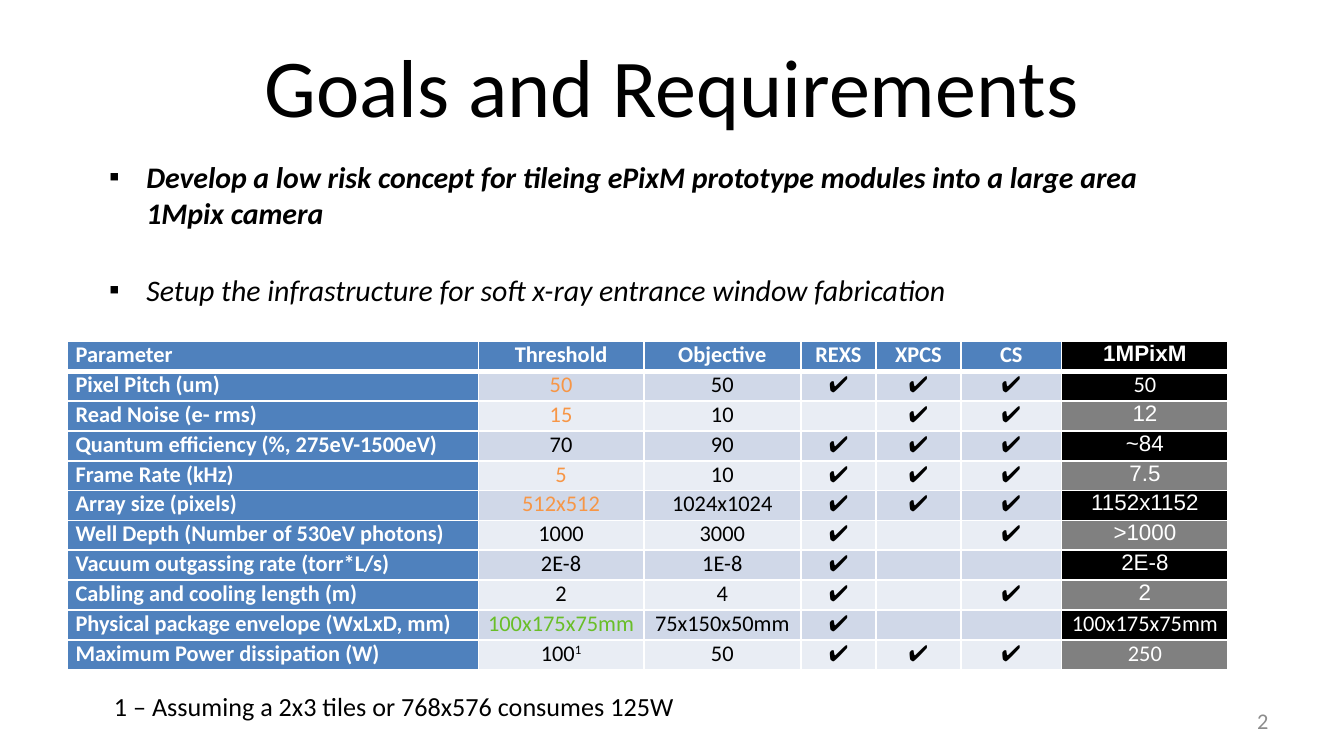
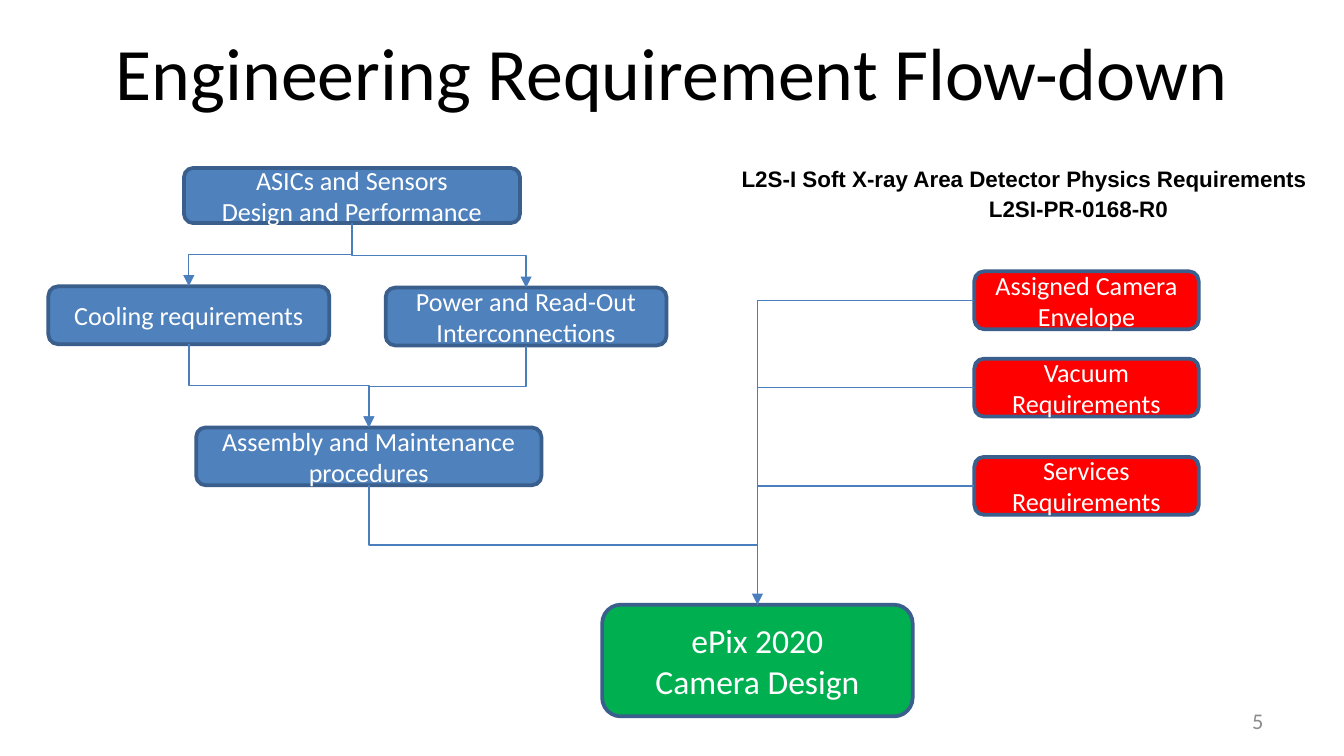
from dataclasses import dataclass

from lxml import etree
from pptx import Presentation
from pptx import util as u
from pptx.dml.color import RGBColor
from pptx.enum import shapes, text
from pptx.oxml import ns

COLORS = {
    "ink": "000000", "white": "FFFFFF", "page": "8C8C8C", "blue": "4F81BD",
    "edge": "3A5F8C", "link": "4B7EBC", "red": "FF0000", "green": "00B050",
    "odd": "D0D8E8", "even": "E9EDF4", "gray": "808080",
    "orange": "F79646", "lime": "69BE28",
}
ALIGN = text.PP_ALIGN
ANCHOR = text.MSO_ANCHOR
BOTTOM_SIDE, LEFT_SIDE, TOP_SIDE = 2, 1, 0


@dataclass(frozen=True)
class Requirement:
    parameter: str
    threshold: str
    objective: str
    experiments: str
    result: str
    tint: str = "ink"
    result_font: str = "Arial"
    note: str = ""


@dataclass(frozen=True)
class Block:
    label: str
    left: float
    top: float
    width: float
    height: float = 31
    fill: str = "blue"
    size: float = 14

    @property
    def center(self) -> float:
        return self.left + self.width / 2

    @property
    def middle(self) -> float:
        return self.top + self.height / 2

    @property
    def bottom(self) -> float:
        return self.top + self.height


HEADINGS = ["Parameter", "Threshold", "Objective", "REXS", "XPCS", "CS", "1MPixM"]
COLUMN_WIDTHS = [220.3, 88.6, 84.2, 40.3, 45.4, 54, 89.3]
ROW_HEIGHT = 16
REQUIREMENTS = [
    Requirement("Pixel Pitch (um)", "50", "50", "✔✔✔", "50", "orange", "Calibri"),
    Requirement("Read Noise (e- rms)", "15", "10", "-✔✔", "12", "orange"),
    Requirement("Quantum efficiency (%, 275eV-1500eV)", "70", "90", "✔✔✔", "~84"),
    Requirement("Frame Rate (kHz)", "5", "10", "✔✔✔", "7.5", "orange"),
    Requirement("Array size (pixels)", "512x512", "1024x1024", "✔✔✔", "1152x1152", "orange"),
    Requirement("Well Depth (Number of 530eV photons)", "1000", "3000", "✔-✔", ">1000"),
    Requirement("Vacuum outgassing rate (torr*L/s)", "2E-8", "1E-8", "✔--", "2E-8"),
    Requirement("Cabling and cooling length (m)", "2", "4", "✔-✔", "2"),
    Requirement("Physical package envelope (WxLxD, mm)", "100x175x75mm", "75x150x50mm",
                "✔--", "100x175x75mm", "lime", "Calibri"),
    Requirement("Maximum Power dissipation (W)", "100", "50", "✔✔✔", "250",
                result_font="Calibri", note="1"),
]

SENSORS = Block("ASICs and Sensors\nDesign and Performance", 98.6, 90, 180, 29.5)
COOLING = Block("Cooling requirements", 25.9, 153.4, 150.5)
POWER = Block("Power and Read-Out Interconnections", 206.6, 154.1, 150.5)
ASSEMBLY = Block("Assembly and Maintenance procedures", 105.1, 229, 185)
CAMERA = Block("ePix 2020\nCamera Design", 322.6, 324, 166.3, 59.8, "green", 18)
EXTERNAL = [
    Block(label, 522, top, 120.2, fill="red")
    for label, top in [("Assigned Camera Envelope", 145.4),
                       ("Vacuum Requirements", 192.2),
                       ("Services\nRequirements", 244.8)]
]
FLOWS = [(SENSORS, COOLING), (SENSORS, POWER), (COOLING, ASSEMBLY),
         (POWER, ASSEMBLY), (ASSEMBLY, CAMERA)]


def rgb(name: str) -> RGBColor:
    return RGBColor.from_string(COLORS[name])


def write(frame, content: str, *, size: float = 12, color: str = "ink",
          font: str = "Calibri", bold: bool = False, italic: bool = False,
          align=ALIGN.LEFT, anchor=None, superscript: str = "") -> None:
    if anchor is not None:
        frame.vertical_anchor = anchor
    for index, line in enumerate(content.split("\n")):
        paragraph = frame.paragraphs[0] if index == 0 else frame.add_paragraph()
        paragraph.alignment = align
        if not line:
            etree.SubElement(paragraph._p, ns.qn("a:endParaRPr"), sz=str(int(size * 100)))
        for part, raised in ((line, False), (superscript, True)):
            if not part:
                continue
            run = paragraph.add_run()
            run.text = part
            run.font.size = u.Pt(size)
            run.font.name = font
            run.font.bold = bold
            run.font.italic = italic
            run.font.color.rgb = rgb(color)
            if raised:
                run.font._element.set("baseline", "30000")


def add_text(slide, left: float, top: float, width: float, height: float,
             content: str, wrap: bool = True, **style):
    frame = slide.shapes.add_textbox(
        u.Pt(left), u.Pt(top), u.Pt(width), u.Pt(height)).text_frame
    frame.word_wrap = wrap
    write(frame, content, **style)
    return frame


def add_titled_slide(deck, title: str, size: float, number: str, anchor, inset: float):
    slide = deck.slides.add_slide(deck.slide_layouts[5])
    heading = slide.shapes.title
    heading.left, heading.top = u.Pt(36), u.Pt(4.3)
    heading.width, heading.height = u.Pt(648), u.Pt(67.7)
    frame = heading.text_frame
    frame.auto_size = text.MSO_AUTO_SIZE.NONE
    frame.margin_left = frame.margin_right = u.Pt(inset)
    frame.margin_top = frame.margin_bottom = u.Pt(inset / 2)
    write(frame, title, size=size, align=ALIGN.CENTER, anchor=anchor)
    page = add_text(slide, 516.2, 375, 167.8, 21.6, number, color="page",
                    align=ALIGN.RIGHT, anchor=ANCHOR.MIDDLE)
    page.margin_right = u.Pt(4.5 if inset == 0 else inset)
    return slide


def add_bullets(slide, left: float, top: float, width: float, height: float,
                items: list[str], gap: float) -> None:
    frame = add_text(slide, left, top, width, height, "\n".join(items),
                     size=16, italic=True)
    for index, paragraph in enumerate(frame.paragraphs):
        properties = paragraph._p.get_or_add_pPr()
        properties.set("marL", str(u.Pt(47.5)))
        properties.set("indent", str(-u.Pt(20)))
        etree.SubElement(properties, ns.qn("a:buFont"), typeface="Arial")
        etree.SubElement(properties, ns.qn("a:buChar"), char="▪")
        if index:
            paragraph.space_before = u.Pt(gap)
    frame.paragraphs[0].runs[0].font.bold = True


def fill_cell(cell, fill: str, content: str, top_line: float, bottom_line: float,
              **style) -> None:
    cell.margin_left = cell.margin_right = u.Pt(4.5)
    cell.margin_top = cell.margin_bottom = 0
    write(cell.text_frame, content, **style)
    properties = cell._tc.get_or_add_tcPr()
    for side, width in (("L", 1), ("R", 1), ("T", top_line), ("B", bottom_line)):
        border = etree.SubElement(properties, ns.qn(f"a:ln{side}"), w=str(u.Pt(width)))
        solid = etree.SubElement(border, ns.qn("a:solidFill"))
        etree.SubElement(solid, ns.qn("a:srgbClr"), val=COLORS["white"])
    cell.fill.solid()
    cell.fill.fore_color.rgb = rgb(fill)


def add_requirements(slide) -> None:
    rows = len(REQUIREMENTS) + 1
    table = slide.shapes.add_table(
        rows, len(HEADINGS), u.Pt(36), u.Pt(182.9),
        u.Pt(sum(COLUMN_WIDTHS)), u.Pt(rows * ROW_HEIGHT)).table
    for column, width in zip(table.columns, COLUMN_WIDTHS):
        column.width = u.Pt(width)
    for row in table.rows:
        row.height = u.Pt(ROW_HEIGHT)
    last = len(HEADINGS) - 1
    for column, heading in enumerate(HEADINGS):
        fill_cell(table.cell(0, column), "ink" if column == last else "blue", heading, 1, 3,
                  color="white", bold=True, font="Arial" if column == last else "Calibri",
                  align=ALIGN.CENTER if column else ALIGN.LEFT)
    for row, need in enumerate(REQUIREMENTS, 1):
        band, result_band = ("odd", "ink") if row % 2 else ("even", "gray")
        marks = [mark.replace("-", "") for mark in need.experiments]
        entries = [
            (need.parameter, "blue", dict(color="white", bold=True)),
            (need.threshold, band, dict(color=need.tint, superscript=need.note)),
            *((value, band, {}) for value in [need.objective, *marks]),
            (need.result, result_band, dict(color="white", font=need.result_font)),
        ]
        for column, (content, fill, style) in enumerate(entries):
            fill_cell(table.cell(row, column), fill, content, 3 if row == 1 else 1, 1,
                      align=ALIGN.CENTER if column else ALIGN.LEFT, **style)


def add_block(slide, block: Block):
    shape = slide.shapes.add_shape(
        shapes.MSO_SHAPE.ROUNDED_RECTANGLE,
        u.Pt(block.left), u.Pt(block.top), u.Pt(block.width), u.Pt(block.height))
    shape.shadow.inherit = False
    shape.fill.solid()
    shape.fill.fore_color.rgb = rgb(block.fill)
    shape.line.color.rgb = rgb("edge")
    shape.line.width = u.Pt(2)
    shape.text_frame.word_wrap = True
    write(shape.text_frame, block.label, size=block.size, color="white",
          align=ALIGN.CENTER, anchor=ANCHOR.MIDDLE)
    return shape


def add_elbow(slide, drawn: dict, source: Block, target: Block, sideways: bool = False) -> None:
    x1, y1 = (source.left, source.middle) if sideways else (source.center, source.bottom)
    x2, y2 = target.center, target.top
    link = slide.shapes.add_connector(
        shapes.MSO_CONNECTOR.ELBOW, u.Pt(x1), u.Pt(y1), u.Pt(x2), u.Pt(y2))
    link.begin_connect(drawn[source], LEFT_SIDE if sideways else BOTTOM_SIDE)
    link.end_connect(drawn[target], TOP_SIDE)
    across, down = abs(x2 - x1), y2 - y1
    properties = link._element.spPr
    if sideways:
        width, height, turn, flip = across, down, 180, "flipV"
        properties.find(ns.qn("a:prstGeom")).set("prst", "bentConnector2")
    else:
        width, height = down, across
        turn, flip = (270, "flipH") if x2 > x1 else (90, "")
    link.left, link.top = u.Pt((x1 + x2 - width) / 2), u.Pt((y1 + y2 - height) / 2)
    link.width, link.height = u.Pt(width), u.Pt(height)
    frame = properties.find(ns.qn("a:xfrm"))
    for name in ("flipH", "flipV"):
        frame.attrib.pop(name, None)
    frame.set("rot", str(turn * 60000))
    if flip:
        frame.set(flip, "1")
    link.line.color.rgb = rgb("link")
    link.line.width = u.Pt(0.75)
    if not sideways:
        etree.SubElement(properties.find(ns.qn("a:ln")), ns.qn("a:tailEnd"), type="triangle")
    etree.SubElement(properties, ns.qn("a:effectLst"))


def build_goals(deck) -> None:
    slide = add_titled_slide(deck, "Goals and Requirements", 44, "2", ANCHOR.BOTTOM, 0)
    add_requirements(slide)
    add_text(slide, 54, 366.5, 432, 24.5,
             "1 – Assuming a 2x3 tiles or 768x576 consumes 125W", size=14)
    add_bullets(slide, 23.8, 81.4, 630, 93.6, [
        "Develop a low risk concept for tileing ePixM prototype modules "
        "into a large area 1Mpix camera",
        "Setup the infrastructure for soft x-ray entrance window fabrication",
    ], gap=22)


def build_flow(deck) -> None:
    slide = add_titled_slide(deck, "Engineering Requirement Flow-down", 39.6, "5",
                             ANCHOR.MIDDLE, 7.2)
    blocks = [SENSORS, COOLING, POWER, ASSEMBLY, CAMERA, *EXTERNAL]
    drawn = {block: add_block(slide, block) for block in blocks}
    for source, target in FLOWS:
        add_elbow(slide, drawn, source, target)
    for source in EXTERNAL:
        add_elbow(slide, drawn, source, CAMERA, sideways=True)
    add_text(slide, 522.7, 100.8, 110.9, 21.6, "L2SI-PR-0168-R0", wrap=False,
             font="Arial", bold=True)
    add_text(slide, 390.2, 85, 329.8, 21.6,
             "L2S-I Soft X-ray Area Detector Physics Requirements",
             font="Arial", bold=True)


def main() -> None:
    deck = Presentation()
    deck.slide_width, deck.slide_height = u.Pt(720), u.Pt(405)
    build_goals(deck)
    build_flow(deck)
    deck.save("out.pptx")


if __name__ == "__main__":
    main()
